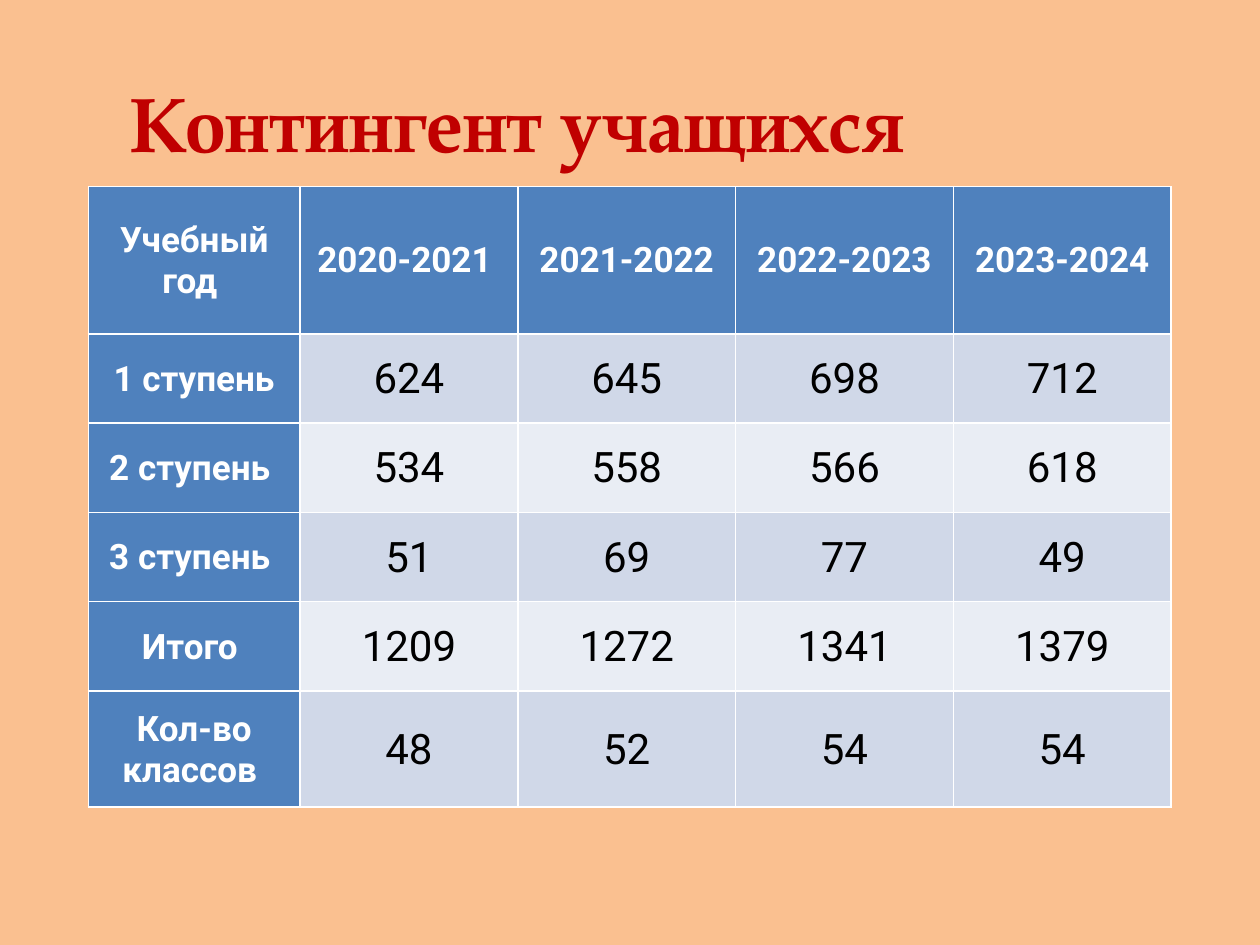
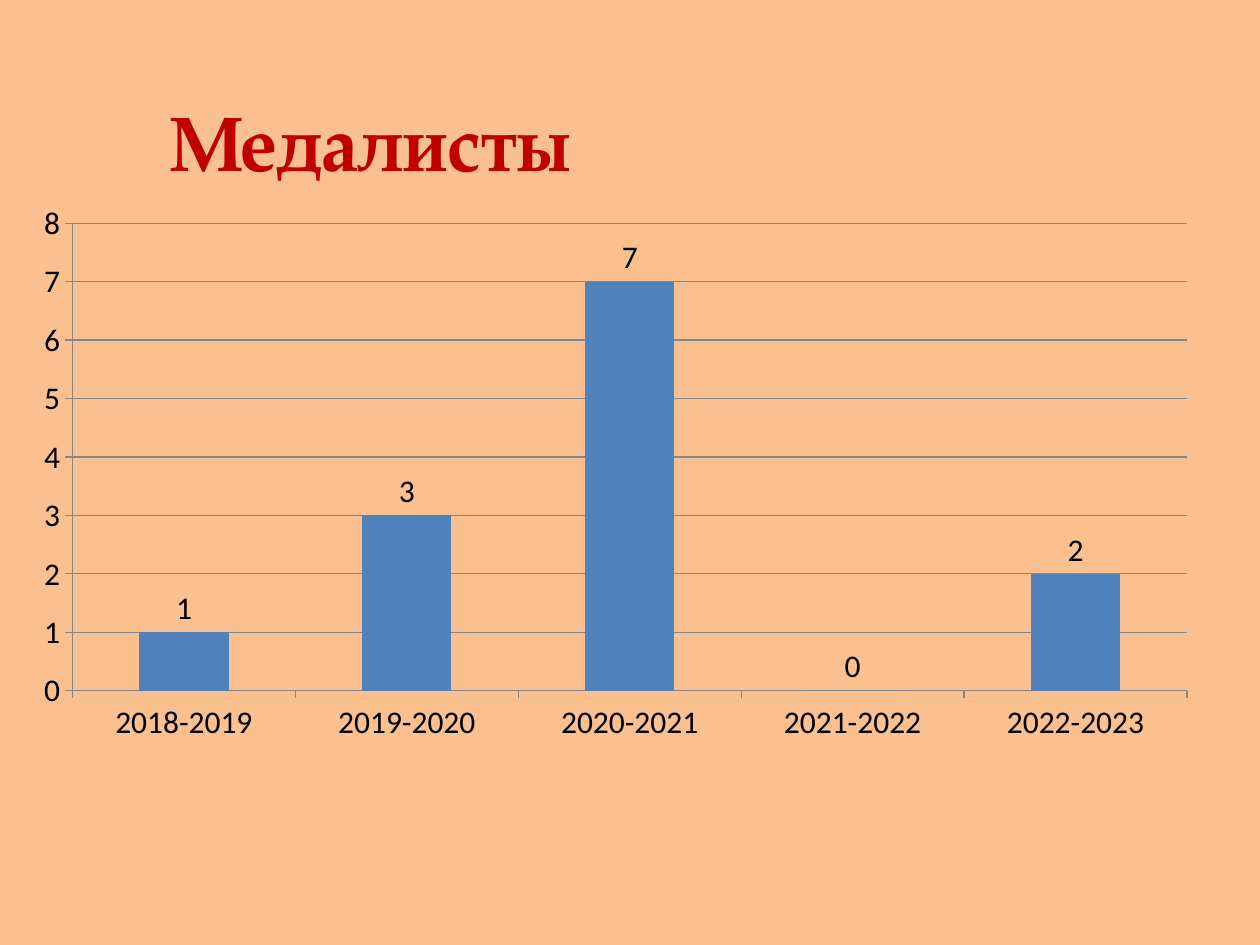
from lxml import etree
from pptx import Presentation
from pptx import util as u
from pptx.chart.data import CategoryChartData
from pptx.dml.color import RGBColor
from pptx.enum import chart as charts, text
from pptx.oxml.ns import qn

PEACH = RGBColor(0xFA, 0xC0, 0x90)
RED = RGBColor(0xC0, 0x00, 0x00)
BLUE = RGBColor(0x4F, 0x81, 0xBD)
BAND_DARK = RGBColor(0xD0, 0xD8, 0xE8)
BAND_LIGHT = RGBColor(0xE9, 0xED, 0xF4)
WHITE = RGBColor(0xFF, 0xFF, 0xFF)
BLACK = RGBColor(0x00, 0x00, 0x00)
GRAY = RGBColor(0x86, 0x86, 0x86)

presentation = Presentation()
presentation.slide_width = u.Cm(25.4)
presentation.slide_height = u.Cm(19.05)


def add_titled_slide(title, left, top, width):
    slide = presentation.slides.add_slide(presentation.slide_layouts[6])
    slide.background.fill.solid()
    slide.background.fill.fore_color.rgb = PEACH
    box = slide.shapes.add_textbox(u.Cm(left), u.Cm(top), u.Cm(width), u.Cm(2.13))
    box.text_frame.word_wrap = True
    run = box.text_frame.paragraphs[0].add_run()
    run.text = title
    run.font.name = "TeX Gyre Pagella"
    run.font.size = u.Pt(44)
    run.font.bold = True
    run.font.color.rgb = RED
    return slide


def add_cell_borders(cell, color, width):
    properties = cell._tc.get_or_add_tcPr()
    for side in ("lnL", "lnR", "lnT", "lnB"):
        line = etree.SubElement(properties, qn(f"a:{side}"), w=str(width))
        fill = etree.SubElement(line, qn("a:solidFill"))
        etree.SubElement(fill, qn("a:srgbClr"), val=str(color))


# Slide 1: number of pupils by school year
slide = add_titled_slide("Контингент учащихся", 2.39, 1.4, 18.26)
pupil_rows = [
    ["Учебный год ", "2020-2021 ", "2021-2022", "2022-2023", "2023-2024"],
    [" 1 ступень ", "624", "645", "698", "712"],
    ["2 ступень ", "534", "558", "566", "618"],
    ["3 ступень ", "51", "69", "77", "49"],
    ["Итого ", "1209", "1272", "1341", "1379"],
    ["Кол-во классов ", "48", "52", "54", "54"],
]
column_widths = [4.27] + [4.39] * 4
row_heights = [2.97] + [1.8] * 4 + [2.34]
table = slide.shapes.add_table(
    len(row_heights), len(column_widths), u.Cm(1.78), u.Cm(3.76),
    u.Cm(sum(column_widths)), u.Cm(sum(row_heights))).table
for column, width in zip(table.columns, column_widths):
    column.width = u.Cm(width)
for row, height in zip(table.rows, row_heights):
    row.height = u.Cm(height)

for row_index, values in enumerate(pupil_rows):
    for column_index, value in enumerate(values):
        is_heading = row_index == 0 or column_index == 0
        cell = table.cell(row_index, column_index)
        add_cell_borders(cell, WHITE, u.Pt(1))
        cell.fill.solid()
        if is_heading:
            cell.fill.fore_color.rgb = BLUE
        else:
            cell.fill.fore_color.rgb = BAND_DARK if row_index % 2 else BAND_LIGHT
        cell.vertical_anchor = text.MSO_ANCHOR.MIDDLE
        cell.margin_left = cell.margin_right = cell.margin_top = u.Cm(0.03)
        cell.margin_bottom = 0
        paragraph = cell.text_frame.paragraphs[0]
        paragraph.alignment = text.PP_ALIGN.CENTER
        run = paragraph.add_run()
        run.text = value
        run.font.name = "Roboto"
        run.font.size = u.Pt(20 if is_heading else 24)
        run.font.bold = is_heading
        run.font.color.rgb = WHITE if is_heading else BLACK

# Slide 2: medal winners by school year
slide = add_titled_slide("Медалисты", 3.18, 1.78, 10.77)
medal_data = CategoryChartData()
medal_data.categories = ["2018-2019", "2019-2020", "2020-2021", "2021-2022", "2022-2023"]
medal_data.add_series("Series 1", [1, 3, 7, 0, 2])
chart = slide.shapes.add_chart(
    charts.XL_CHART_TYPE.COLUMN_CLUSTERED,
    u.Cm(0.41), u.Cm(3.89), u.Cm(24), u.Cm(11.28), medal_data).chart
chart.has_legend = False
chart.has_title = False
chart.font.name = "Calibri"
chart.font.size = u.Pt(18)
chart.font.color.rgb = BLACK

plot = chart.plots[0]
plot.vary_by_categories = False
plot.gap_width = 150
plot.has_data_labels = True
plot.data_labels.show_value = True
plot.data_labels.position = charts.XL_LABEL_POSITION.OUTSIDE_END
series = plot.series[0]
series.format.fill.solid()
series.format.fill.fore_color.rgb = BLUE

chart.value_axis.minimum_scale = 0
chart.value_axis.maximum_scale = 8
chart.value_axis.major_unit = 1
chart.value_axis.has_major_gridlines = True
for axis in (chart.category_axis, chart.value_axis):
    axis.major_tick_mark = charts.XL_TICK_MARK.OUTSIDE
    axis.minor_tick_mark = charts.XL_TICK_MARK.NONE
for line_owner in (chart.category_axis, chart.value_axis, chart.value_axis.major_gridlines):
    line_owner.format.line.color.rgb = GRAY
    line_owner.format.line.width = u.Pt(0.75)

presentation.save("out.pptx")
